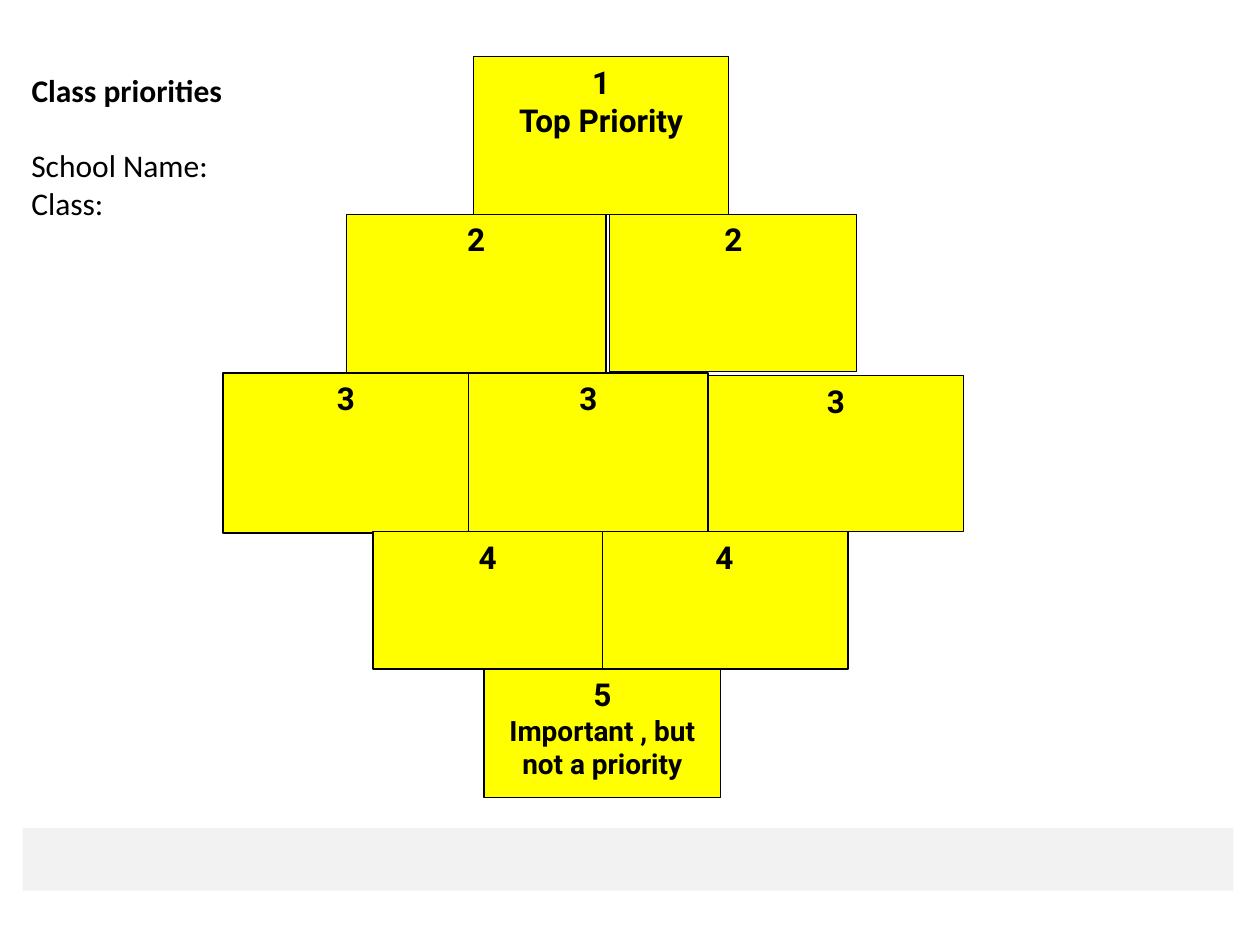
"""Builds a diamond ranking sheet for class priorities."""
from dataclasses import dataclass

from pptx import Presentation
from pptx.dml.color import RGBColor
from pptx.enum.shapes import MSO_SHAPE
from pptx.enum.text import MSO_ANCHOR, MSO_AUTO_SIZE, PP_ALIGN
from pptx.util import Inches, Pt


@dataclass(frozen=True)
class Theme:
    ink: str = "000000"
    card: str = "FFFF00"
    band: str = "F2F2F2"
    body_font: str = "Calibri"
    card_font: str = "Roboto"
    size: int = 18
    small: int = 16
    line: float = 0.75


def write(tf, *lines, font, color, sizes, bold=False, align=PP_ALIGN.LEFT, wrap=True):
    tf.word_wrap = wrap
    tf.vertical_anchor = MSO_ANCHOR.TOP
    for i, (text, size) in enumerate(zip(lines, sizes)):
        p = tf.paragraphs[0] if i == 0 else tf.add_paragraph()
        p.alignment = align
        r = p.add_run()
        r.text = text
        r.font.name = font
        r.font.size = Pt(size)
        r.font.bold = bold
        r.font.color.rgb = RGBColor.from_string(color)


class Sheet:
    CELL = 0.1

    def __init__(self, prs, theme):
        self.theme = theme
        self.s = prs.slides.add_slide(prs.slide_layouts[5])

    def grid(self, *cells):
        return [Inches(n * self.CELL) for n in cells]

    def title(self, text, *cells):
        sp = self.s.shapes.title
        sp.left, sp.top, sp.width, sp.height = self.grid(*cells)
        write(sp.text_frame, text, font=self.theme.body_font, color=self.theme.ink,
              sizes=[self.theme.size], bold=True, wrap=False)
        sp.text_frame.auto_size = MSO_AUTO_SIZE.NONE

    def text(self, lines, *cells):
        tf = self.s.shapes.add_textbox(*self.grid(*cells)).text_frame
        write(tf, *lines, font=self.theme.body_font, color=self.theme.ink,
              sizes=[self.theme.size] * len(lines), wrap=False)
        tf.auto_size = MSO_AUTO_SIZE.SHAPE_TO_FIT_TEXT

    def box(self, fill, *cells):
        sp = self.s.shapes.add_shape(MSO_SHAPE.RECTANGLE, *self.grid(*cells))
        sp.shadow.inherit = False
        sp.fill.solid()
        sp.fill.fore_color.rgb = RGBColor.from_string(fill)
        sp.line.fill.background()
        return sp

    def card(self, lines, sizes, *cells):
        sp = self.box(self.theme.card, *cells)
        sp.line.color.rgb = RGBColor.from_string(self.theme.ink)
        sp.line.width = Pt(self.theme.line)
        write(sp.text_frame, *lines, font=self.theme.card_font, color=self.theme.ink,
              sizes=sizes, bold=True, align=PP_ALIGN.CENTER)

    def tier(self, rank, top, cards, caption=None, caption_size=None):
        lines = [str(rank)] + ([caption] if caption else [])
        sizes = [self.theme.size, caption_size or self.theme.size]
        for left, width, height, drop in cards:
            self.card(lines, sizes, left, top + drop, width, height)


def main():
    prs = Presentation()
    prs.slide_width, prs.slide_height = Inches(10), Inches(7.5)
    theme = Theme()
    sheet = Sheet(prs, theme)
    sheet.tier(1, 4.5, [(37.6, 20.2, 12.5, 0)], "Top Priority")
    sheet.tier(2, 17, [(27.5, 20.6, 12.8, 0), (48.4, 19.6, 12.5, 0)])
    sheet.tier(3, 29.6, [(56.2, 20.3, 12.4, 0.2), (17.7, 19.5, 12.7, 0),
                         (37.2, 19, 12.6, 0)])
    sheet.tier(4, 42.2, [(47.7, 19.6, 10.9, 0), (29.6, 18.2, 10.9, 0)])
    sheet.tier(5, 53.1, [(38.4, 18.8, 10.2, 0)],
               "Important , but not a priority", theme.small)
    sheet.box(theme.band, 1.8, 65.7, 96.1, 5)
    sheet.title("Class priorities", 1.5, 5.1, 17.5, 4)
    sheet.text(["School Name:", "Class:"], 1.5, 11.1, 17.5, 7.1)
    prs.save("out.pptx")


if __name__ == "__main__":
    main()
